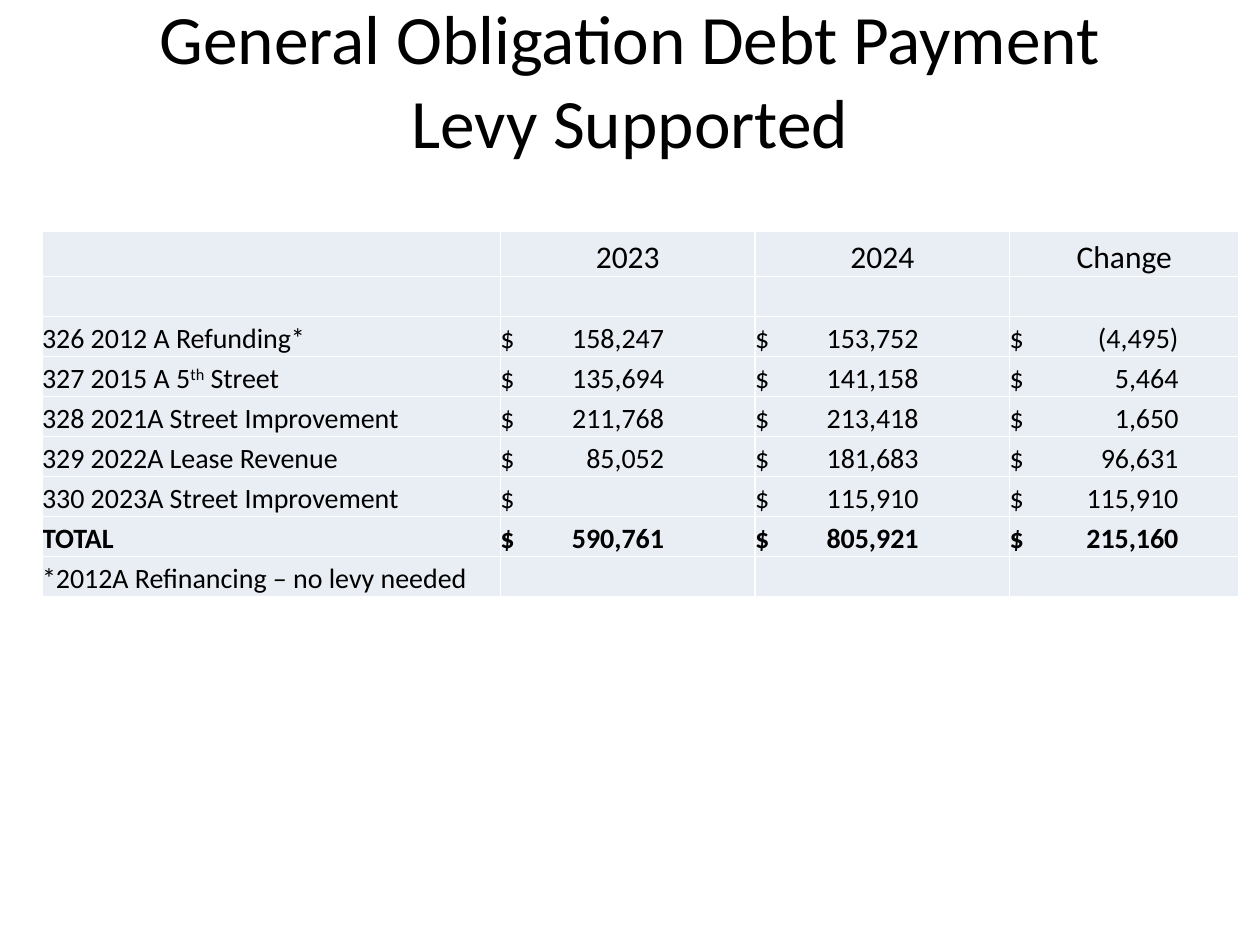
from lxml import etree
from pptx import Presentation
from pptx.dml.color import RGBColor
from pptx.enum.text import MSO_ANCHOR, MSO_AUTO_SIZE, PP_ALIGN
from pptx.oxml.ns import qn
from pptx.util import Pt

CENTER, LEFT = PP_ALIGN.CENTER, PP_ALIGN.LEFT
MIDDLE, BOTTOM = MSO_ANCHOR.MIDDLE, MSO_ANCHOR.BOTTOM
NO_FIT = MSO_AUTO_SIZE.NONE
TITLE_ONLY = 5

COLUMN_WIDTHS = [262, 145.5, 145.5, 131]
HEADER_HEIGHT, ROW_HEIGHT = 26, 22.85
AMOUNT_ENDS = [None, 93.5, 93.5, 96.5]
SUPERSCRIPT = "th"

ROWS = [
    ["", "2023", "2024", "Change"],
    ["", "", "", ""],
    ["326 2012 A Refunding*", "$\t158,247", "$\t153,752", "$\t(4,495)"],
    ["327 2015 A 5^th^ Street", "$\t135,694", "$\t141,158", "$\t5,464"],
    ["328 2021A Street Improvement", "$\t211,768", "$\t213,418", "$\t1,650"],
    ["329 2022A Lease Revenue", "$\t85,052", "$\t181,683", "$\t96,631"],
    ["330 2023A Street Improvement", "$", "$\t115,910", "$\t115,910"],
    ["TOTAL", "$\t590,761", "$\t805,921", "$\t215,160"],
    ["*2012A Refinancing – no levy needed", "", "", ""],
]


def color(value):
    return RGBColor.from_string(value)


def apply_format(target, values):
    for name, value in values.items():
        setattr(target, name, value)


class SlideBuilder:
    font_name = "Calibri"
    text_color = "000000"
    cell_fill = "E9EDF4"
    border_color = "FFFFFF"

    def __init__(self, slide):
        self.slide = slide

    def format_font(self, font, size, bold=False):
        apply_format(font, {"name": self.font_name, "size": Pt(size), "bold": bold})
        font.color.rgb = color(self.text_color)

    def title(self, text, left, top, width, height, size):
        title = self.slide.shapes.title
        apply_format(title, {"left": Pt(left), "top": Pt(top),
                             "width": Pt(width), "height": Pt(height)})
        frame = title.text_frame
        frame.text = text
        apply_format(frame, {"auto_size": NO_FIT, "word_wrap": True,
                             "vertical_anchor": MIDDLE})
        paragraph = frame.paragraphs[0]
        paragraph.alignment = CENTER
        for run in paragraph.runs:
            self.format_font(run.font, size)

    def table(self, rows, left, top):
        heights = [HEADER_HEIGHT] + [ROW_HEIGHT] * (len(rows) - 1)
        table = self.slide.shapes.add_table(
            len(rows), len(COLUMN_WIDTHS), Pt(left), Pt(top),
            Pt(sum(COLUMN_WIDTHS)), Pt(sum(heights))).table
        apply_format(table, {"first_row": False, "horz_banding": False})
        for column, width in zip(table.columns, COLUMN_WIDTHS):
            column.width = Pt(width)
        for row, height in zip(table.rows, heights):
            row.height = Pt(height)
        for row_index, texts in enumerate(rows):
            header = row_index == 0
            for column_index, text in enumerate(texts):
                self.cell(table.cell(row_index, column_index), text,
                          size=18 if header else 16,
                          bold=texts[0] == "TOTAL",
                          alignment=CENTER if header else LEFT,
                          amount_end=AMOUNT_ENDS[column_index])

    def cell(self, cell, text, size, bold, alignment, amount_end):
        """Fill one cell; text between carets is raised."""
        apply_format(cell, {"margin_left": 0, "margin_right": 0, "margin_top": 0,
                            "margin_bottom": 0, "vertical_anchor": BOTTOM})
        self.borders(cell)
        cell.fill.solid()
        cell.fill.fore_color.rgb = color(self.cell_fill)
        paragraph = cell.text_frame.paragraphs[0]
        paragraph.alignment = alignment
        if "\t" in text:
            self.right_tab(paragraph, amount_end)
        for part in filter(None, text.split("^")):
            run = paragraph.add_run()
            run.text = part
            self.format_font(run.font, size, bold)
            if part == SUPERSCRIPT:
                run.font._element.set("baseline", "30000")

    def borders(self, cell):
        properties = cell._tc.get_or_add_tcPr()
        for side in ("lnL", "lnR", "lnT", "lnB"):
            line = etree.SubElement(properties, qn(f"a:{side}"), w=str(Pt(1)))
            fill = etree.SubElement(line, qn("a:solidFill"))
            etree.SubElement(fill, qn("a:srgbClr"), val=self.border_color)

    def right_tab(self, paragraph, position):
        properties = paragraph._p.get_or_add_pPr()
        tabs = etree.SubElement(properties, qn("a:tabLst"))
        etree.SubElement(tabs, qn("a:tab"), pos=str(Pt(position)), algn="r")


def main():
    presentation = Presentation()
    presentation.slide_width, presentation.slide_height = Pt(720), Pt(540)
    layout = presentation.slide_layouts[TITLE_ONLY]
    builder = SlideBuilder(presentation.slides.add_slide(layout))
    builder.title("General Obligation Debt Payment\vLevy Supported",
                  36, 0, 648, 90, size=39.6)
    builder.table(ROWS, 24, 132)
    presentation.save("out.pptx")


if __name__ == "__main__":
    main()
